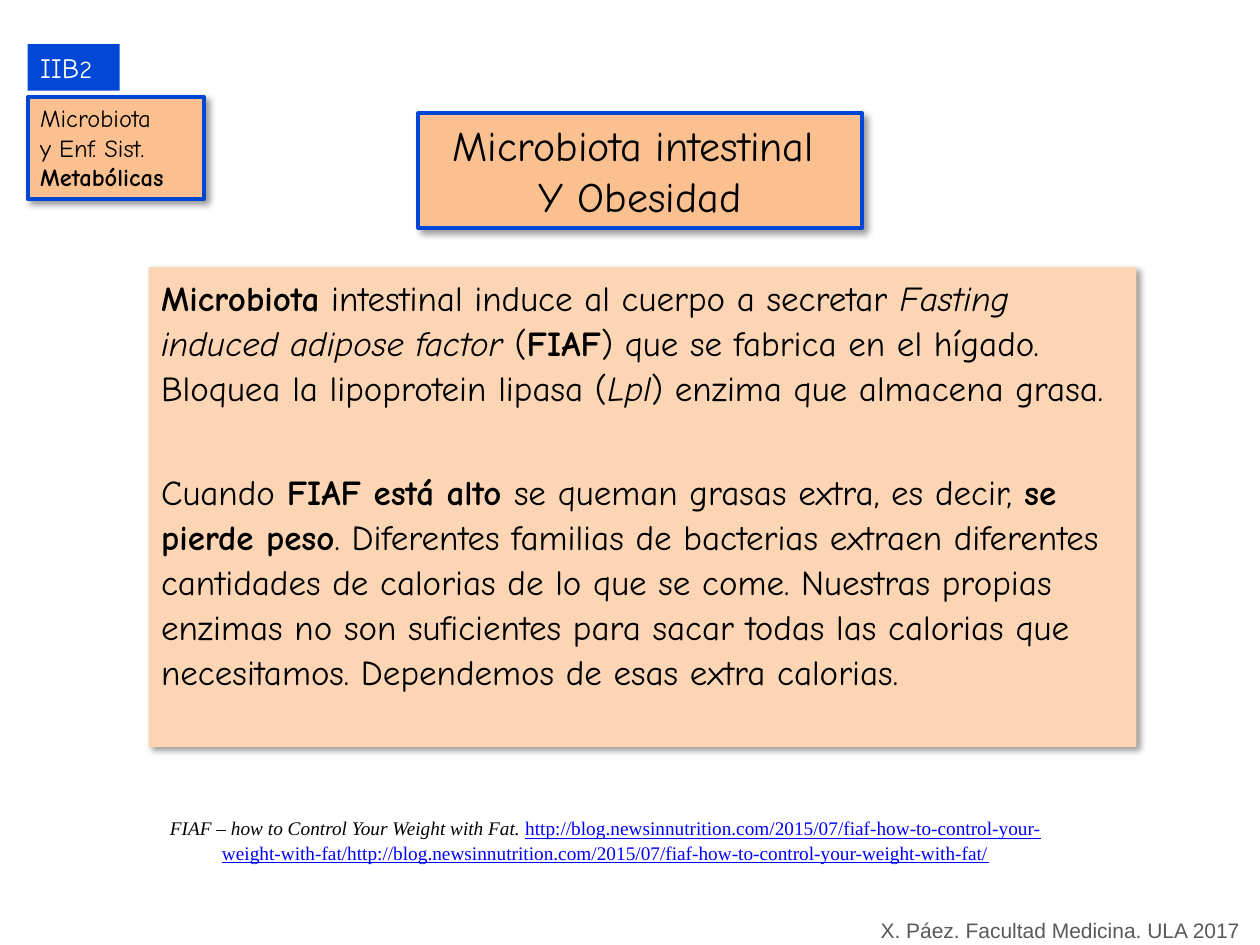
from lxml import etree
from pptx import Presentation
from pptx import util as u
from pptx.dml.color import RGBColor
from pptx.enum import shapes, text
from pptx.oxml import parse_xml

NS = "http://schemas.openxmlformats.org/drawingml/2006/main"
BLUE, PEACH, PALE = "0047D6", "FAC090", "FCD5B5"
SHADE = f"""<a:effectLst xmlns:a="{NS}">
  <a:outerShdw blurRad="50800" dist="38100" dir="2700000" algn="tl" rotWithShape="0">
    <a:srgbClr val="000000"><a:alpha val="40000"/></a:srgbClr>
  </a:outerShdw>
</a:effectLst>"""

prs = Presentation()
prs.slide_width, prs.slide_height = u.Inches(10), u.Inches(7.5)
slide = prs.slides.add_slide(prs.slide_layouts[6])


def add_box(at, fill=None, line=None, shade=False, wrap=True):
    at = [u.Inches(n) for n in at]
    if fill:
        box = slide.shapes.add_shape(shapes.MSO_SHAPE.RECTANGLE, *at)
        box.fill.solid()
        box.fill.fore_color.rgb = RGBColor.from_string(fill)
        if line:
            box.line.color.rgb = RGBColor.from_string(line)
            box.line.width = u.Pt(2.25)
        else:
            box.line.fill.background()
        box.shadow.inherit = False
        if shade:
            props = box.fill._xPr
            props.replace(props.find(f"{{{NS}}}effectLst"), parse_xml(SHADE))
    else:
        box = slide.shapes.add_textbox(*at)
    box.text_frame.word_wrap = wrap
    box.text_frame.vertical_anchor = text.MSO_ANCHOR.TOP
    return box.text_frame


def add_text(frame, paras, size, font="Comic Neue", color="000000",
             align=text.PP_ALIGN.LEFT, lead=None, after=0):
    """Fill the frame; a run is (words, style), with style letters b, i, u."""
    for n, runs in enumerate(paras):
        para = frame.add_paragraph() if n else frame.paragraphs[0]
        para.alignment = align
        para.space_after = u.Pt(after)
        if lead:
            para.line_spacing = lead
        for words, style in runs:
            run = para.add_run()
            run.text = words
            run.font.size, run.font.name = u.Pt(size), font
            run.font.bold, run.font.italic = "b" in style, "i" in style
            run.font.underline = "u" in style
            run.font.color.rgb = RGBColor.from_string(color)


body = add_box((1.18, 2.12, 7.84, 3.81), PALE, shade=True)
add_text(body, [
    [("Microbiota", "b"),
     (" intestinal induce al cuerpo a secretar ", ""),
     ("Fasting induced adipose factor ", "i"),
     ("(", ""), ("FIAF", "b"),
     (") que se fabrica en el hígado. Bloquea la lipoprotein lipasa (", ""),
     ("Lpl", "i"),
     (") enzima que almacena grasa.", "")],
    [("Cuando ", ""), ("FIAF está alto ", "b"),
     ("se queman grasas extra, es decir, ", ""),
     ("se pierde peso", "b"),
     (". Diferentes familias de bacterias extraen diferentes cantidades de "
      "calorias de lo que se come. Nuestras propias enzimas no son suficientes "
      "para sacar todas las calorias que necesitamos. Dependemos de esas extra "
      "calorias.", "")],
], 20, lead=1.07, after=34)

cite = add_box((1.18, 6.42, 7.25, 0.5))
add_text(cite, [[("FIAF – how to Control Your Weight with Fat. ", "i")]], 11,
         "Times New Roman", align=text.PP_ALIGN.CENTER, lead=1.07)
web = cite.paragraphs[0].add_run()
web.text = ("http://blog.newsinnutrition.com/2015/07/fiaf-how-to-control-your-weight-with-fat/"
            "http://blog.newsinnutrition.com/2015/07/fiaf-how-to-control-your-weight-with-fat/")
web.font.size, web.font.name = u.Pt(11), "Times New Roman"
web.font.underline = True
web.font.color.rgb = RGBColor.from_string("0000FF")

foot = add_box((6.89, 7.23, 3.08, 0.3), wrap=False)
add_text(foot, [[("X. Páez. Facultad Medicina. ULA 2017", "")]], 12, "Arial", "595959")

title = add_box((3.32, 0.9, 3.52, 0.91), PEACH, BLUE, True)
add_text(title, [[("Microbiota intestinal ", "")], [("Y Obesidad", "")]], 24,
         align=text.PP_ALIGN.CENTER)

code = add_box((0.22, 0.35, 0.73, 0.37), BLUE, wrap=False)
add_text(code, [[("IIB", ""), ("2", "")]], 16, color="FFFFFF")
code.paragraphs[0].runs[1].font.size = u.Pt(14)

topic = add_box((0.22, 0.77, 1.4, 0.81), PEACH, BLUE, True)
add_text(topic, [[("Microbiota", "")], [("y Enf. Sist.", "")],
                 [("Metabólicas", "b")]], 14)

prs.save("out.pptx")
